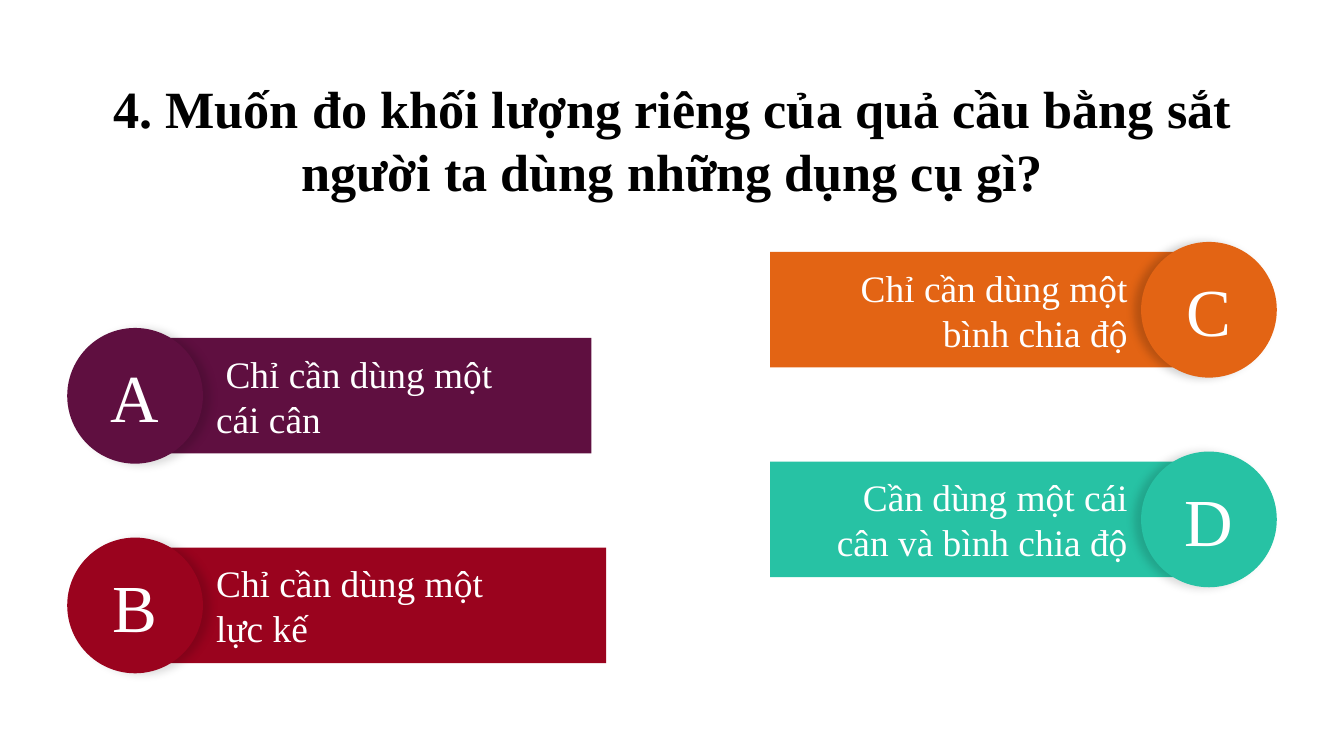
from dataclasses import dataclass

from lxml import etree
from pptx import Presentation
from pptx.dml.color import RGBColor
from pptx.enum import shapes, text
from pptx.oxml import ns
from pptx.util import Inches, Pt

COLORS = {
    "ink": "000000",
    "paper": "FFFFFF",
    "plum": "5F0F40",
    "red": "9A031E",
    "orange": "E36414",
    "teal": "27C2A4",
}
FONT = "Times New Roman"
PAGE_WIDTH = Inches(10)
PAGE_HEIGHT = PAGE_WIDTH * 9 // 16
BADGE_SIZE = 1.01
BANNER_HEIGHT = 0.86
LABEL_HEIGHT = 0.56
ROW_STEP = 1.56
LEFT_TOP, RIGHT_TOP = 2.44, 1.8
LEFT_BADGE, RIGHT_BADGE = 0.5, 8.49


@dataclass(frozen=True)
class Answer:
    letter: str
    wording: str
    color: str
    top: float
    banner_width: float
    label_width: float = 2.46
    on_right: bool = False
    shadow_alpha: int = 15
    first_indent: float = 0


ANSWERS = [
    Answer("C", "Chỉ cần dùng một bình chia độ", "orange", RIGHT_TOP, 3.21,
           on_right=True, shadow_alpha=19),
    Answer("D", "Cần dùng một cái cân và bình chia độ", "teal",
           RIGHT_TOP + ROW_STEP, 3.21, label_width=2.6, on_right=True),
    Answer("A", "Chỉ cần dùng một cái cân", "plum", LEFT_TOP, 3.35,
           first_indent=0.07),
    Answer("B", "Chỉ cần dùng một lực kế", "red", LEFT_TOP + ROW_STEP, 3.46),
]


def rgb(name: str) -> RGBColor:
    return RGBColor.from_string(COLORS[name])


def write(box, wording: str, size: float, color: str, align, bold=False) -> None:
    frame = box.text_frame
    frame_format = {
        "word_wrap": True,
        "auto_size": text.MSO_AUTO_SIZE.NONE,
        "vertical_anchor": text.MSO_ANCHOR.MIDDLE,
        "margin_left": Inches(0.1),
        "margin_right": Inches(0.1),
        "margin_top": Inches(0.1),
        "margin_bottom": Inches(0.1),
    }
    for name, value in frame_format.items():
        setattr(frame, name, value)
    para = frame.paragraphs[0]
    para.alignment = align
    span = para.add_run()
    span.text = wording
    for name, value in {"name": FONT, "size": Pt(size), "bold": bold}.items():
        setattr(span.font, name, value)
    span.font.color.rgb = rgb(color)


def add_filled(group, kind, left: float, top: float, width: float, height: float,
               color: str):
    shape = group.shapes.add_shape(
        kind, Inches(left), Inches(top), Inches(width), Inches(height))
    shape.shadow.inherit = False
    shape.fill.solid()
    shape.fill.fore_color.rgb = rgb(color)
    shape.line.fill.background()
    return shape


def cast_shadow(shape, alpha: int, angle: int) -> None:
    """Give the shape a soft outer shadow; alpha in percent, angle in degrees."""
    effects = shape.element.spPr.find(ns.qn("a:effectLst"))
    shadow = etree.SubElement(
        effects, ns.qn("a:outerShdw"), blurRad=str(Pt(4.5)), dist=str(Pt(3.8)),
        dir=str(angle * 60000), algn="ctr", rotWithShape="0")
    tint = etree.SubElement(shadow, ns.qn("a:srgbClr"), val=COLORS["ink"])
    etree.SubElement(tint, ns.qn("a:alpha"), val=str(alpha * 1000))


def add_answer(page, answer: Answer) -> None:
    group = page.shapes.add_group_shape()
    middle = answer.top + BADGE_SIZE / 2
    if answer.on_right:
        badge_left, banner_left = RIGHT_BADGE, 5.73
        label_left = RIGHT_BADGE - answer.label_width
        align, angle = text.PP_ALIGN.RIGHT, 176
    else:
        badge_left, banner_left = LEFT_BADGE, 1.05
        label_left = LEFT_BADGE + BADGE_SIZE
        align, angle = text.PP_ALIGN.LEFT, 11

    add_filled(group, shapes.MSO_SHAPE.RECTANGLE, banner_left,
               middle - BANNER_HEIGHT / 2, answer.banner_width, BANNER_HEIGHT,
               answer.color)
    badge = add_filled(group, shapes.MSO_SHAPE.OVAL, badge_left, answer.top,
                       BADGE_SIZE, BADGE_SIZE, answer.color)
    cast_shadow(badge, answer.shadow_alpha, angle)
    write(badge, answer.letter, 36, "paper", text.PP_ALIGN.CENTER)

    label = group.shapes.add_textbox(
        Inches(label_left), Inches(middle - LABEL_HEIGHT / 2),
        Inches(answer.label_width), Inches(LABEL_HEIGHT))
    write(label, answer.wording, 20, "paper", align)
    if answer.first_indent:
        properties = label.text_frame.paragraphs[0]._p.get_or_add_pPr()
        properties.set("indent", str(Inches(answer.first_indent)))


def main() -> None:
    deck = Presentation()
    deck.slide_width, deck.slide_height = PAGE_WIDTH, PAGE_HEIGHT
    page = deck.slides.add_slide(deck.slide_layouts[5])
    title = page.shapes.title
    place = {"left": 0.5, "top": 0.6, "width": 9, "height": 0.87}
    for name, value in place.items():
        setattr(title, name, Inches(value))
    write(title,
          "4. Muốn đo khối lượng riêng của quả cầu bằng sắt "
          "người ta dùng những dụng cụ gì?",
          28, "ink", text.PP_ALIGN.CENTER, bold=True)
    for answer in ANSWERS:
        add_answer(page, answer)
    deck.save("out.pptx")


if __name__ == "__main__":
    main()
